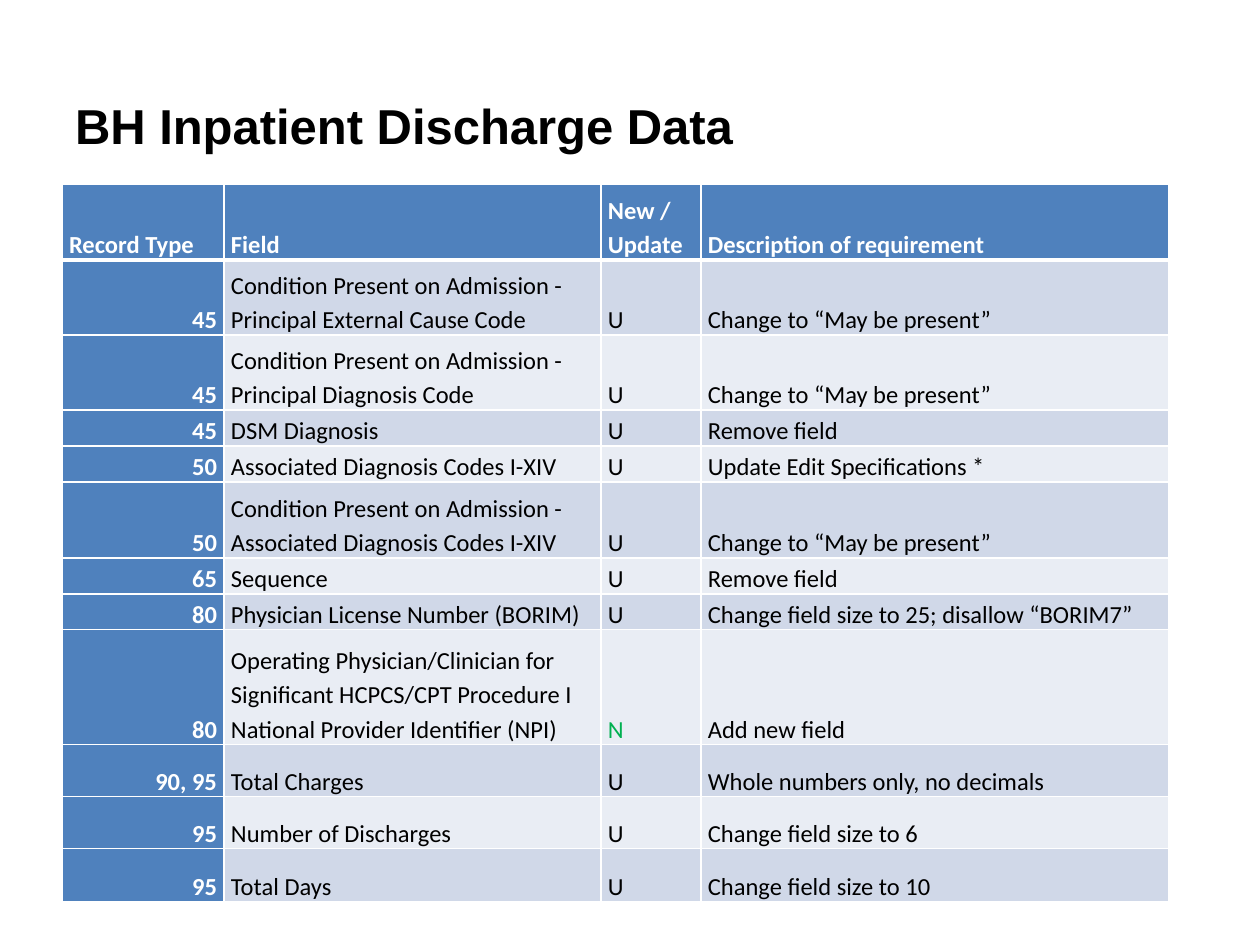
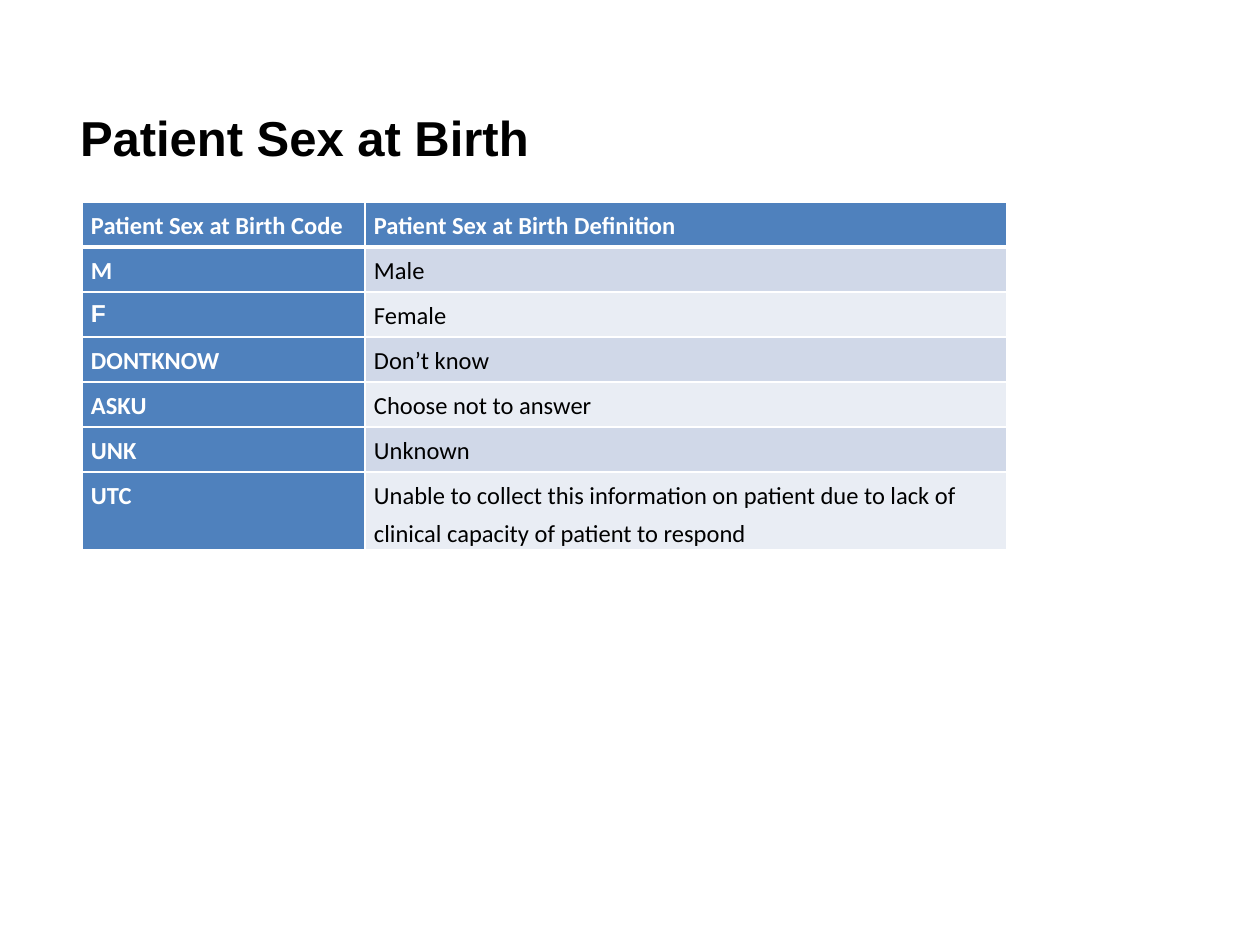
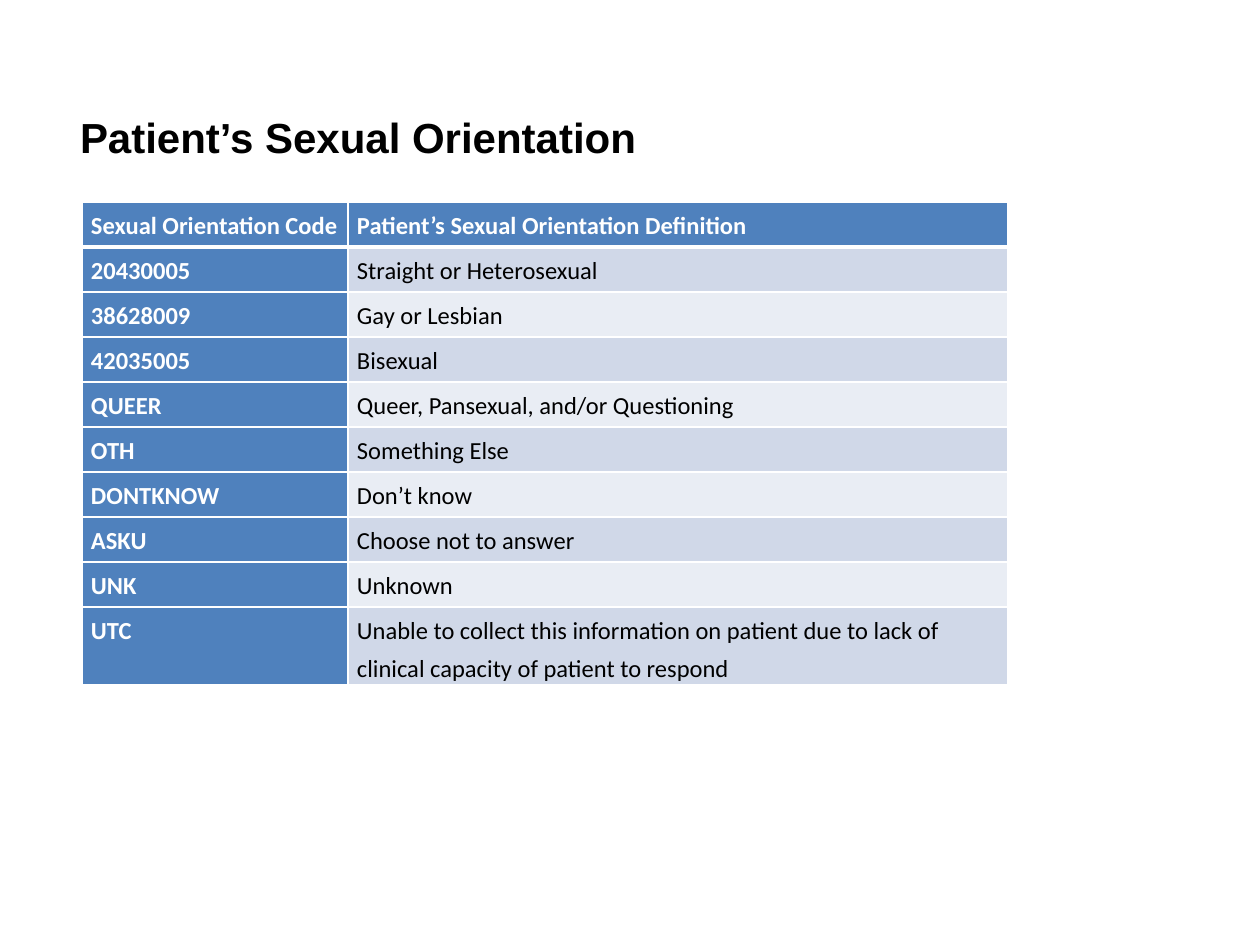
from lxml import etree
from pptx import Presentation
from pptx.dml.color import RGBColor
from pptx.enum.text import MSO_ANCHOR, MSO_AUTO_SIZE, PP_ALIGN
from pptx.oxml.ns import qn
from pptx.util import Pt

LEFT, RIGHT = PP_ALIGN.LEFT, PP_ALIGN.RIGHT
TOP, MIDDLE, BOTTOM = MSO_ANCHOR.TOP, MSO_ANCHOR.MIDDLE, MSO_ANCHOR.BOTTOM
NO_FIT = MSO_AUTO_SIZE.NONE

PX_PER_INCH = 126
EMU_PER_INCH = 914400
TITLE_ONLY = 5
TITLE_FONT, TABLE_FONT = "Arial", "Calibri"
TABLE_SIZE = 14
COLORS = {
    "paper": "FFFFFF",
    "ink": "000000",
    "header": "4F81BD",
    "odd_row": "D0D8E8",
    "even_row": "E9EDF4",
    "new_field": "00B050",
}

POA = "Condition Present on Admission - "
MAY_BE = "Change to “May be present”"
DISCHARGE_ROWS = [
    ("Record Type", "Field", "New / Update", "Description of requirement"),
    ("45", POA + "Principal External Cause Code", "U", MAY_BE),
    ("45", POA + "Principal Diagnosis Code", "U", MAY_BE),
    ("45", "DSM Diagnosis", "U", "Remove field"),
    ("50", "Associated Diagnosis Codes I-XIV", "U", "Update Edit Specifications *"),
    ("50", POA + "Associated Diagnosis Codes I-XIV", "U", MAY_BE),
    ("65", "Sequence", "U", "Remove field"),
    ("80", "Physician License Number (BORIM)", "U",
     "Change field size to 25; disallow “BORIM7”"),
    ("80", "Operating Physician/Clinician for Significant HCPCS/CPT Procedure I "
     "National Provider Identifier (NPI)", "N", "Add new field"),
    ("90, 95", "Total Charges", "U", "Whole numbers only, no decimals"),
    ("95", "Number of Discharges", "U", "Change field size to 6"),
    ("95", "Total Days", "U", "Change field size to 10"),
]
DISCHARGE_HEIGHTS = [76, 75, 75, 36, 36, 76, 36, 36, 115, 52, 52, 53]

NO_ANSWER_ROWS = [
    ("DONTKNOW", "Don’t know"),
    ("ASKU", "Choose not to answer"),
    ("UNK", "Unknown"),
    ("UTC", "Unable to collect this information on patient due to lack of "
     "clinical capacity of patient to respond"),
]
BIRTH_SEX_ROWS = [
    ("Patient Sex at Birth Code", "Patient Sex at Birth Definition"),
    ("M", "Male"),
    ("F", "Female"),
] + NO_ANSWER_ROWS
ORIENTATION_ROWS = [
    ("Sexual Orientation Code", "Patient’s Sexual Orientation Definition"),
    ("20430005", "Straight or Heterosexual"),
    ("38628009", "Gay or Lesbian"),
    ("42035005", "Bisexual"),
    ("QUEER", "Queer, Pansexual, and/or Questioning"),
    ("OTH", "Something Else"),
] + NO_ANSWER_ROWS


def px(length):
    return round(length * EMU_PER_INCH / PX_PER_INCH)


def color(name):
    return RGBColor.from_string(COLORS[name])


def add_run(paragraph, text, size, font, ink, bold):
    run = paragraph.add_run()
    run.text = text
    run.font.size = Pt(size)
    run.font.name = font
    run.font.bold = bold
    run.font.color.rgb = color(ink)


def add_titled_slide(prs, title, size, box, inset_left=13, inset_top=6):
    slide = prs.slides.add_slide(prs.slide_layouts[TITLE_ONLY])
    heading = slide.shapes.title
    heading.left, heading.top, heading.width, heading.height = map(px, box)
    frame = heading.text_frame
    frame.auto_size = NO_FIT
    frame.word_wrap = True
    frame.vertical_anchor = MIDDLE
    frame.margin_left, frame.margin_top = px(inset_left), px(inset_top)
    frame.margin_bottom = px(6)
    frame.paragraphs[0].alignment = LEFT
    add_run(frame.paragraphs[0], title, size, TITLE_FONT, "ink", True)
    return slide


def set_borders(cell, widths):
    """Draw white borders; widths maps L, R, T, B (in that order) to points."""
    properties = cell._tc.get_or_add_tcPr()
    for side, width in widths.items():
        line = etree.SubElement(properties, qn(f"a:ln{side}"), w=str(Pt(width)))
        fill = etree.SubElement(line, qn("a:solidFill"))
        etree.SubElement(fill, qn("a:srgbClr"), val=COLORS["paper"])


def format_cell(cell, text, row, column, style):
    is_header, is_label = row == 0, row == 0 or column == 0
    if is_header:
        set_borders(cell, {"L": 1, "R": 1, "T": 1, "B": 3})
    else:
        set_borders(cell, {"L": 1, "R": 1, "B": 1})
    band = "odd_row" if row % 2 else "even_row"
    cell.fill.solid()
    cell.fill.fore_color.rgb = color("header" if is_label else band)
    cell.margin_left = cell.margin_right = px(style["inset"])
    cell.margin_top = cell.margin_bottom = 0
    cell.vertical_anchor = style["anchor"]
    paragraph = cell.text_frame.paragraphs[0]
    paragraph.line_spacing = style["spacing"]
    paragraph.space_after = Pt(style["after"])
    paragraph.alignment = style["label_align"] if column == 0 and not is_header else LEFT
    ink = "paper" if is_label else "new_field" if text == "N" else "ink"
    font = TITLE_FONT if text == "F" else TABLE_FONT
    add_run(paragraph, text, TABLE_SIZE, font, ink, is_label)


def add_field_table(slide, rows, left, top, widths, heights, style):
    table = slide.shapes.add_table(
        len(rows), len(widths), px(left), px(top),
        px(sum(widths)), px(sum(heights))).table
    table.first_col = True
    for column, width in zip(table.columns, widths):
        column.width = px(width)
    for table_row, height in zip(table.rows, heights):
        table_row.height = px(height)
    for r, row in enumerate(rows):
        for c, text in enumerate(row):
            format_cell(table.cell(r, c), text, r, c, style)


def add_code_slide(prs, title, size, rows, widths):
    """Add a slide that lists codes and their definitions."""
    slide = add_titled_slide(prs, title, size, (32, 48, 1108, 123), 48, 61)
    style = {"inset": 9, "anchor": TOP, "spacing": 1.3, "after": 3, "label_align": LEFT}
    heights = [45] * len(rows)
    add_field_table(slide, rows, 82, 202, widths, heights, style)


def main():
    prs = Presentation()
    prs.slide_width, prs.slide_height = px(1260), px(945)

    discharge = add_titled_slide(
        prs, "BH Inpatient Discharge Data", 28, (62, 37, 1108, 175))
    add_field_table(
        discharge, DISCHARGE_ROWS, 62, 184, [162, 377, 100, 468], DISCHARGE_HEIGHTS,
        {"inset": 7, "anchor": BOTTOM, "spacing": 1.15, "after": 0, "label_align": RIGHT})

    add_code_slide(prs, "Patient Sex at Birth", 28, BIRTH_SEX_ROWS, [283, 642])
    add_code_slide(prs, "Patient’s Sexual Orientation", 24, ORIENTATION_ROWS, [266, 660])
    prs.save("out.pptx")


if __name__ == "__main__":
    main()
